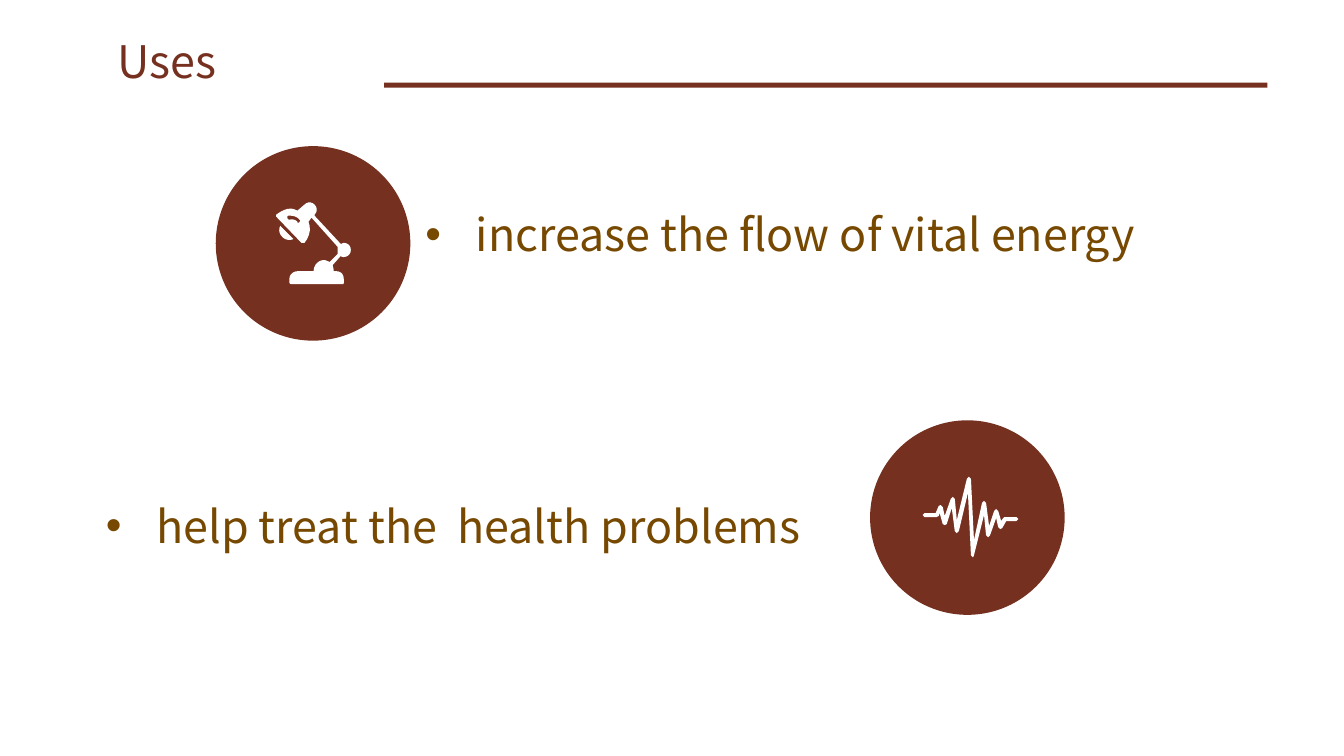
from pptx import Presentation
from pptx.dml.color import RGBColor
from pptx.enum.shapes import MSO_SHAPE
from pptx.enum.text import MSO_ANCHOR, MSO_AUTO_SIZE, PP_ALIGN
from pptx.oxml.ns import qn
from pptx.util import Pt
from lxml.etree import SubElement

SCALE = 9144
STEPS = 5

LAMP = [
    (341, 255), (345, 255, 348, 252, 348, 248), (348, 244, 345, 241, 341, 241),
    (340, 241, 339, 242, 338, 242), (312, 214), (312, 213),
    (315, 210, 315, 206, 312, 203), (309, 200, 305, 200, 302, 203), (295, 209),
    (293, 208, 291, 207, 288, 207), (283, 207, 278, 210, 274, 213),
    (274, 214, 274, 215, 274, 215), (299, 241), (300, 241, 301, 241, 302, 241),
    (307, 235, 309, 227, 306, 220), (309, 216), (335, 245),
    (335, 247, 335, 250, 335, 252), (327, 260), (325, 259, 323, 258, 321, 258),
    (316, 258, 311, 263, 311, 269), (296, 269), (291, 269, 287, 272, 287, 277),
    (287, 280), (287, 281, 288, 282, 289, 282), (340, 282),
    (341, 282, 341, 281, 341, 280), (341, 277), (341, 272, 338, 269, 333, 269),
    (331, 269), (331, 266, 330, 264, 330, 263), (338, 254),
    (339, 255, 340, 255, 341, 255),
]
SHINE = [
    (297, 220), (297, 221, 296, 221, 296, 221), (295, 221, 295, 221, 295, 220),
    (293, 218, 290, 217, 287, 218), (286, 218, 285, 217, 285, 216),
    (285, 215, 285, 214, 286, 214), (288, 214),
    (291, 214, 295, 215, 297, 218), (298, 218, 298, 220, 297, 220),
]
BULB = [
    (278, 224), (276, 228, 277, 232, 280, 235),
    (282, 237, 284, 238, 287, 238), (288, 238, 290, 238, 291, 237),
]
PULSE = [
    (1008, 513), (996, 513), (995, 514), (993, 517), (990, 507), (988, 505),
    (986, 507), (981, 522), (978, 499), (976, 497), (974, 499), (966, 536),
    (963, 475), (961, 473), (959, 475), (949, 516), (947, 495), (945, 493),
    (943, 495), (937, 512), (935, 503), (933, 501), (931, 502), (928, 509),
    (917, 509), (915, 511), (917, 513), (929, 513), (931, 512), (932, 509),
    (935, 520), (937, 521), (939, 520), (944, 504), (947, 527), (949, 529),
    (951, 527), (960, 489), (963, 551), (965, 553), (966, 551), (976, 511),
    (978, 531), (980, 533), (982, 531), (988, 514), (990, 523), (992, 525),
    (994, 524), (998, 517), (1008, 517), (1010, 515),
]


def px(num):
    """Turn px into EMU."""
    return round(num * SCALE)


def color(code):
    """Turn a hex string into a colour."""
    return RGBColor.from_string(code)


def trace(path):
    """Turn corners and Bezier curves into EMU points."""
    spots = [path[0]]
    for item in path[1:]:
        if len(item) == 2:
            spots.append(item)
            continue
        ends = [spots[-1], item[:2], item[2:4], item[4:]]
        for step in range(1, STEPS + 1):
            t = step / STEPS
            parts = ((1 - t) ** 3, 3 * t * (1 - t) ** 2, 3 * t * t * (1 - t), t ** 3)
            spots.append(tuple(sum(w * p[i] for w, p in zip(parts, ends)) for i in (0, 1)))
    return [(px(x), px(y)) for x, y in spots]


class Deck:
    """Hold the style and the current slide."""

    font = "Noto Sans CJK SC"
    size = 32
    brown = "753020"
    gold = "764800"
    white = "FFFFFF"

    def __init__(self):
        """Start a deck with one slide."""
        self.prs = Presentation()
        self.prs.slide_width, self.prs.slide_height = px(1333), px(750)
        self.slide = self.prs.slides.add_slide(self.prs.slide_layouts[3])
        self.shapes = self.slide.shapes

    def paint(self, shape, code):
        """Give a shape a plain fill."""
        shape.shadow.inherit = False
        shape.fill.solid()
        shape.fill.fore_color.rgb = color(code)
        shape.line.fill.background()

    def block(self, kind, *box):
        """Add a brown preset shape."""
        self.paint(self.shapes.add_shape(kind, *map(px, box)), self.brown)

    def icon(self, *paths):
        """Add a white outline made of one or more closed paths."""
        first, *rest = map(trace, paths)
        pen = self.shapes.build_freeform(*first[0], scale=1.0)
        pen.add_line_segments(first[1:], close=True)
        for spots in rest:
            pen.move_to(*spots[0])
            pen.add_line_segments(spots[1:], close=True)
        self.paint(pen.convert_to_shape(), self.white)

    def label(self, shape, text, code, align, *box):
        """Place a placeholder and set its text."""
        shape.left, shape.top, shape.width, shape.height = map(px, box)
        frame = shape.text_frame
        frame.text = text
        frame.word_wrap = True
        frame.auto_size = MSO_AUTO_SIZE.SHAPE_TO_FIT_TEXT
        frame.vertical_anchor = MSO_ANCHOR.MIDDLE
        frame.margin_top = frame.margin_bottom = 0
        para = frame.paragraphs[0]
        para.alignment = align
        para.space_before = Pt(0)
        font = para.runs[0].font
        font.name, font.size = self.font, Pt(self.size)
        font.color.rgb = color(code)
        return frame

    def title(self, text, *box):
        """Set the slide title."""
        frame = self.label(self.shapes.title, text, self.brown, PP_ALIGN.CENTER, *box)
        frame.margin_left = frame.margin_right = 0

    def point(self, slot, text, *box):
        """Set a bullet in a body placeholder."""
        body = self.slide.placeholders[slot]
        frame = self.label(body, text, self.gold, PP_ALIGN.LEFT, *box)
        props = frame.paragraphs[0]._p.get_or_add_pPr()
        props.set("marL", str(px(50)))
        props.set("indent", str(px(-50)))
        SubElement(props, qn("a:buFont")).set("typeface", "Arial")
        SubElement(props, qn("a:buChar")).set("char", "•")


def main():
    """Build and save the slide."""
    deck = Deck()
    deck.block(MSO_SHAPE.OVAL, 214, 145, 193, 193)
    deck.icon(LAMP, SHINE)
    deck.icon(BULB)
    deck.block(MSO_SHAPE.OVAL, 863, 417, 193, 193)
    deck.icon(PULSE)
    deck.block(MSO_SHAPE.RECTANGLE, 381, 82, 876, 5)
    deck.title("Uses", -137, 33, 606, 54)
    deck.point(1, "increase the flow of vital energy", 412, 200, 753, 64)
    deck.point(2, "help treat the  health problems", 95, 489, 745, 64)
    deck.prs.save("out.pptx")


if __name__ == "__main__":
    main()
